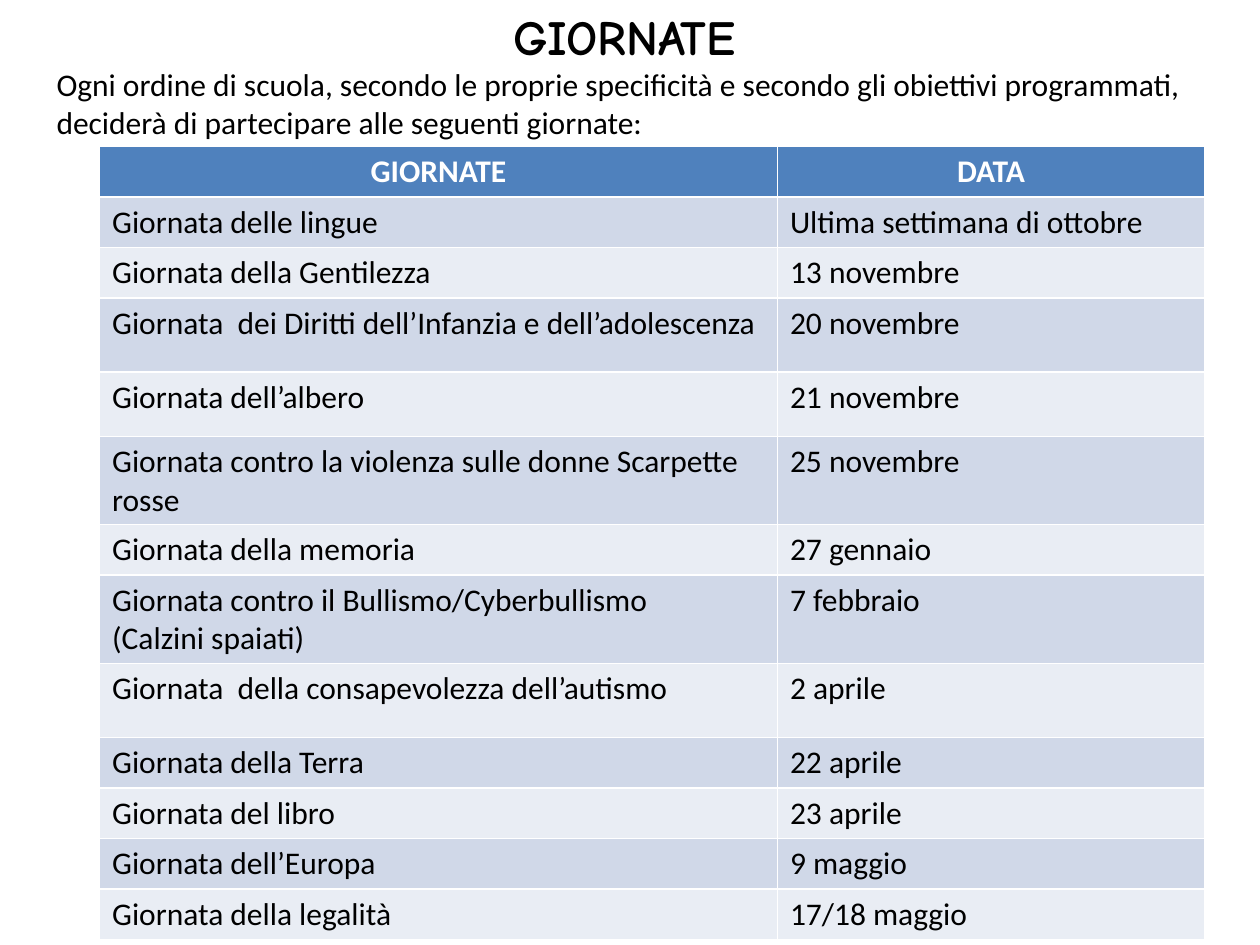
from pptx import Presentation
from pptx import util as u
from pptx.dml.color import RGBColor
from pptx.enum import text

WIDTH, HEIGHT = 10, 7.5
BODY_FONT, TITLE_FONT = "Calibri", "Comic Neue"
BLACK, WHITE, HEADER_BLUE = "000000", "FFFFFF", "4F81BD"
BANDS = ("D0D8E8", "E9EDF4")
COLUMN_SHARES = (0.538, 0.339)
SINGLE, MEDIUM, DOUBLE = 0.34, 0.51, 0.59

INTRO = ("Ogni ordine di scuola, secondo le proprie specificità e secondo gli "
         "obiettivi programmati, deciderà di partecipare alle seguenti giornate:")

DAYS = [
    ("Giornata delle lingue", "Ultima settimana di ottobre", SINGLE),
    ("Giornata della Gentilezza", "13 novembre", SINGLE),
    ("Giornata  dei Diritti dell’Infanzia e dell’adolescenza", "20 novembre", DOUBLE),
    ("Giornata dell’albero", "21 novembre", MEDIUM),
    ("Giornata contro la violenza sulle donne Scarpette rosse", "25 novembre", DOUBLE),
    ("Giornata della memoria", "27 gennaio", SINGLE),
    ("Giornata contro il Bullismo/Cyberbullismo\n(Calzini spaiati)", "7 febbraio", DOUBLE),
    ("Giornata  della consapevolezza dell’autismo", "2 aprile", DOUBLE),
    ("Giornata della Terra", "22 aprile", SINGLE),
    ("Giornata del libro", "23 aprile", SINGLE),
    ("Giornata dell’Europa", "9 maggio", SINGLE),
    ("Giornata della legalità", "17/18 maggio", SINGLE),
]


def color(hex_code):
    return RGBColor.from_string(hex_code)


def across(share):
    return u.Inches(WIDTH * share)


def down(share):
    return u.Inches(HEIGHT * share)


def style_paragraph(paragraph, size=18, font=BODY_FONT, ink=BLACK, bold=False, centered=False):
    paragraph.alignment = text.PP_ALIGN.CENTER if centered else text.PP_ALIGN.LEFT
    for run in paragraph.runs:
        run.font.size = u.Pt(size)
        run.font.name = font
        run.font.bold = bold
        run.font.color.rgb = color(ink)


def add_heading(slide):
    heading = slide.shapes.add_textbox(across(0.035), 0, across(0.921), down(0.157))
    frame = heading.text_frame
    frame.word_wrap = True
    frame.text = f"GIORNATE\n{INTRO}"
    title, intro = frame.paragraphs
    style_paragraph(title, size=28, font=TITLE_FONT, bold=True, centered=True)
    style_paragraph(intro)


def fill_cell(cell, words, fill, **style):
    cell.fill.solid()
    cell.fill.fore_color.rgb = color(fill)
    cell.text_frame.text = words
    for paragraph in cell.text_frame.paragraphs:
        style_paragraph(paragraph, **style)


def add_calendar(slide):
    heights = [SINGLE] + [height for _, _, height in DAYS]
    calendar = slide.shapes.add_table(
        len(heights), len(COLUMN_SHARES), across(0.079), down(0.155),
        across(sum(COLUMN_SHARES)), u.Inches(sum(heights))).table
    for column, share in zip(calendar.columns, COLUMN_SHARES):
        column.width = across(share)
    for row, height in zip(calendar.rows, heights):
        row.height = u.Inches(height)
    for column, label in enumerate(("GIORNATE", "DATA")):
        fill_cell(calendar.cell(0, column), label, HEADER_BLUE,
                  ink=WHITE, bold=True, centered=True)
    for index, (day, date, _) in enumerate(DAYS):
        for column, words in enumerate((day, date)):
            fill_cell(calendar.cell(index + 1, column), words, BANDS[index % 2])


def main():
    deck = Presentation()
    deck.slide_width, deck.slide_height = u.Inches(WIDTH), u.Inches(HEIGHT)
    slide = deck.slides.add_slide(deck.slide_layouts[6])
    add_heading(slide)
    add_calendar(slide)
    deck.save("out.pptx")


if __name__ == "__main__":
    main()
